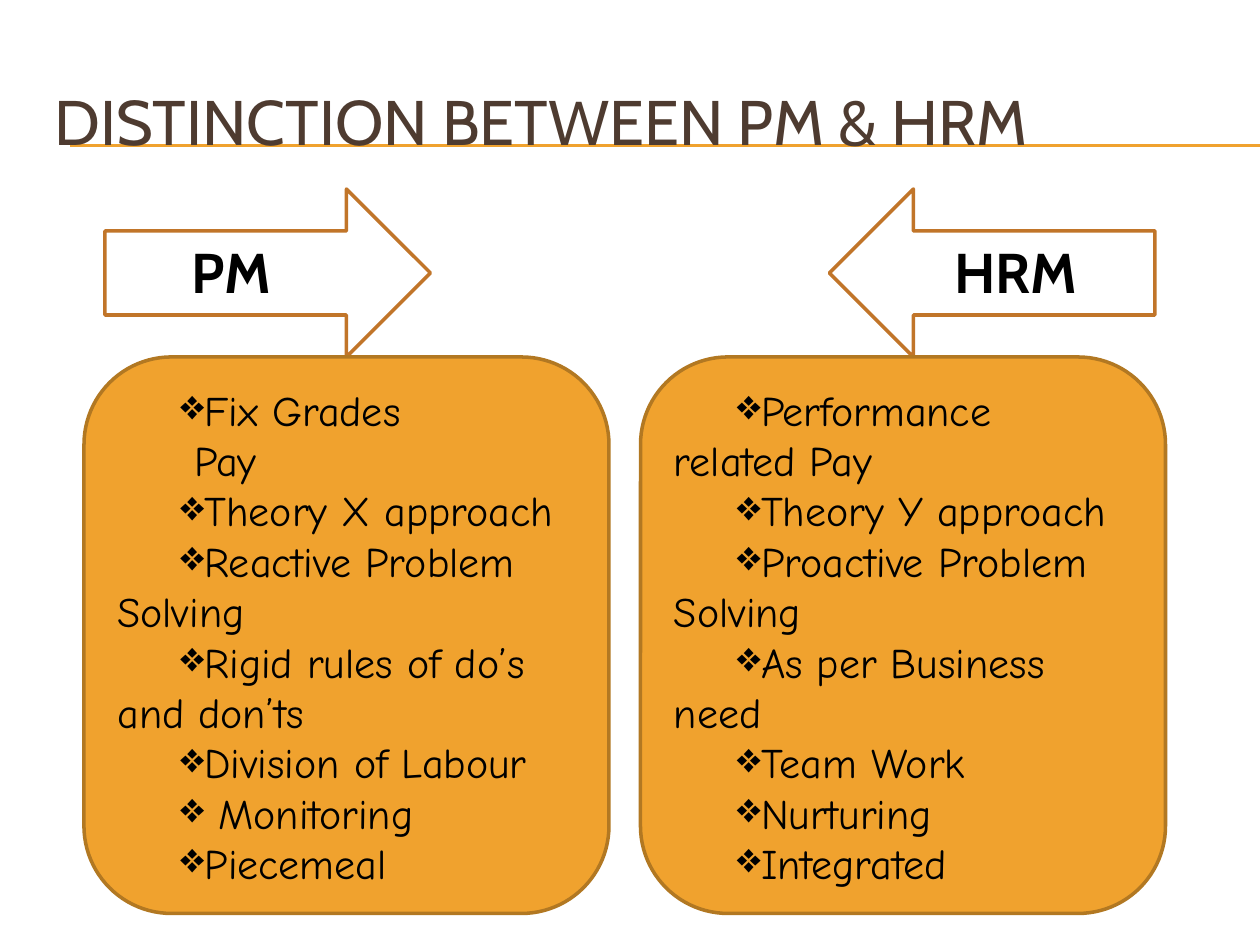
from lxml.etree import SubElement as Sub
from pptx import Presentation
from pptx.dml.color import RGBColor
from pptx.enum.shapes import MSO_CONNECTOR as Link, MSO_SHAPE as Kind
from pptx.enum.text import MSO_ANCHOR as Anchor, MSO_AUTO_SIZE as Fit, PP_ALIGN as Align
from pptx.oxml.ns import qn
from pptx.util import Inches, Pt

BLACK = RGBColor(0x00, 0x00, 0x00)
WHITE = RGBColor(0xFF, 0xFF, 0xFF)
BROWN = RGBColor(0x4E, 0x3B, 0x30)
GOLD = RGBColor(0xF0, 0xA2, 0x2E)
RUST = RGBColor(0xC1, 0x75, 0x29)
OCHRE = RGBColor(0xB2, 0x78, 0x22)

deck = Presentation()
deck.slide_width, deck.slide_height = Inches(10), Inches(7.5)
slide = deck.slides.add_slide(deck.slide_layouts[6])
shapes = slide.shapes
COL, ROW = deck.slide_width / 120, deck.slide_height / 90


def put_shape(kind, col, row, wide, high, fill, edge):
    item = shapes.add_shape(kind, int(col * COL), int(row * ROW), int(wide * COL), int(high * ROW))
    item.shadow.inherit = False
    item.fill.solid()
    item.fill.fore_color.rgb = fill
    item.line.color.rgb = edge
    item.line.width = Pt(2)


def put_text(col, row, wide, high, lines, look, color, frame, align=Align.LEFT):
    box = shapes.add_textbox(int(col * COL), int(row * ROW), int(wide * COL), int(high * ROW))
    body = box.text_frame
    for key, value in {"word_wrap": True, **frame}.items():
        setattr(body, key, value)
    body.text = "\n".join(lines)
    for para in body.paragraphs:
        para.alignment = align
        for run in para.runs:
            run.font.color.rgb = color
            for key, value in look.items():
                setattr(run.font, key, value)
    return body


for row in (13.8, 13.9):
    rule = shapes.add_connector(Link.STRAIGHT, int(6.7 * COL), int(row * ROW), int(120 * COL), int(row * ROW))
    rule.line.color.rgb = GOLD
    rule.line.width = Pt(0.75)
    Sub(rule._element.spPr, qn("a:effectLst"))

TITLE = {"name": "Cabin", "size": Pt(36)}
HEAD = {"name": "Cabin", "size": Pt(32), "bold": True}
LIST = {"name": "Comic Neue", "size": Pt(24)}
GROW = {"auto_size": Fit.SHAPE_TO_FIT_TEXT}

put_text(4, 6, 114, 11, ["DISTINCTION BETWEEN PM & HRM"], TITLE, BROWN, {"vertical_anchor": Anchor.MIDDLE})

sides = [
    (Kind.RIGHT_ARROW, 10, "PM", 12, 20, 8, 10, 47, [
        "Fix Grades", " Pay", "Theory X approach", "Reactive Problem Solving",
        "Rigid rules of do’s and don’ts", "Division of Labour", " Monitoring", "Piecemeal"]),
    (Kind.LEFT_ARROW, 79, "HRM", 87.4, 18.7, 61, 63, 46, [
        "Performance\vrelated Pay", "Theory Y approach", "Proactive Problem Solving",
        "As per Business need", "Team Work", "Nurturing", "Integrated"]),
]

for arrow, tail, name, left, wide, card, edge, span, points in sides:
    put_shape(arrow, tail, 18, 31, 16, WHITE, RUST)
    put_text(left, 22, wide, 7.7, [name], HEAD, BLACK, GROW, Align.CENTER)
    put_shape(Kind.ROUNDED_RECTANGLE, card, 34, 50, 53, GOLD, OCHRE)
    body = put_text(edge, 36, span, 49.7, points, LIST, BLACK, GROW)
    for para in body.paragraphs:
        props = para._p.get_or_add_pPr()
        props.set("marL", "0")
        props.set("indent", str(Inches(0.5)))
        if para.text != " Pay":
            Sub(props, qn("a:buChar")).set("char", "❖")

deck.save("out.pptx")
